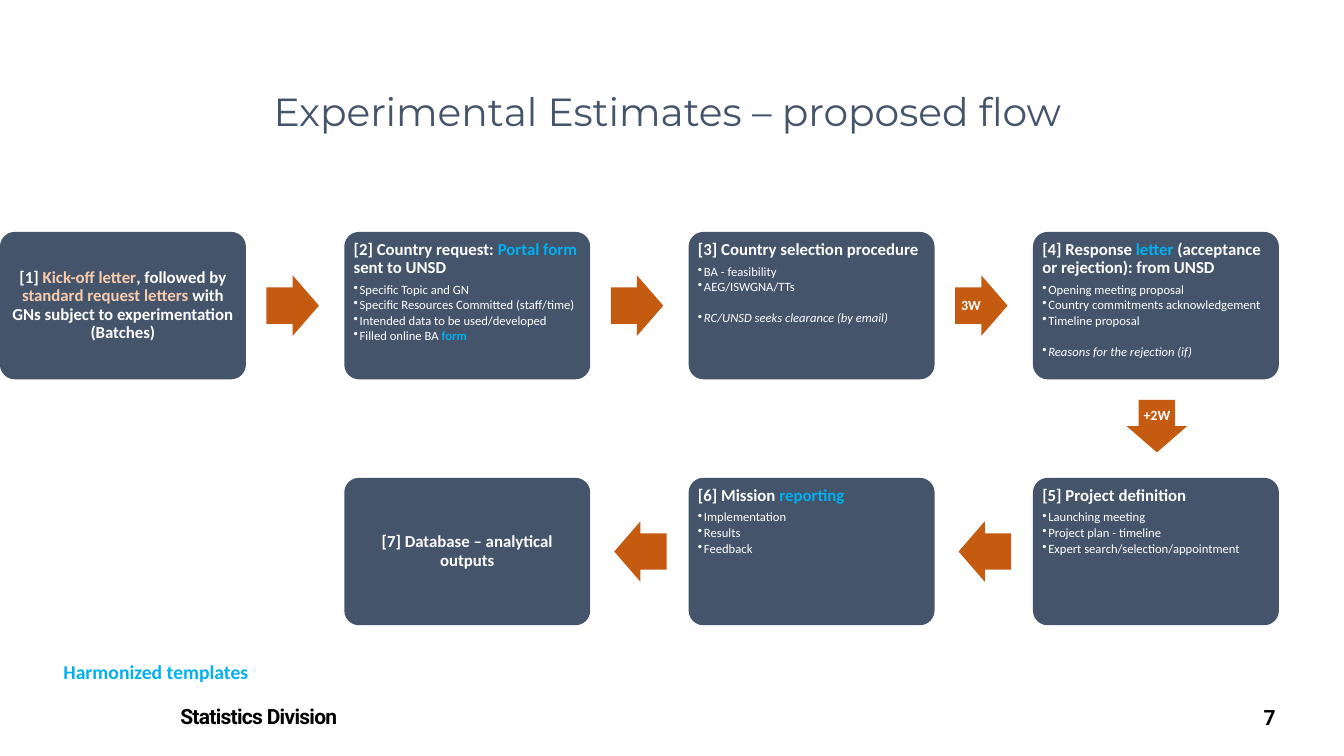
from dataclasses import dataclass
from typing import NamedTuple

from lxml.etree import SubElement
from pptx import Presentation
from pptx.dml.color import RGBColor as Rgb
from pptx.enum.shapes import MSO_SHAPE as Kind
from pptx.enum.text import MSO_ANCHOR as Anchor, PP_ALIGN as Align
from pptx.oxml.ns import qn
from pptx.util import Inches, Pt

WIDE, HIGH = Inches(13.33), Inches(7.5)


@dataclass(frozen=True)
class Theme:
    slate: str = "44546A"
    rust: str = "C55A11"
    white: str = "FFFFFF"
    black: str = "000000"
    peach: str = "F8CBAD"
    cyan: str = "00B0F0"
    body: str = "Calibri"
    title: str = "Montserrat"
    foot: str = "Roboto"
    huge: float = 28
    large: float = 15
    note: float = 14
    head: float = 12
    mark: float = 10
    item: float = 9


@dataclass(frozen=True)
class Grid:
    """Flow grid, in percent of the slide; arrow sizes in inches."""
    top: float = 30.67
    col: float = 25.62
    row: float = 32.53
    card_w: float = 18.3
    card_h: float = 19.5
    arrow_l: float = 0.52
    arrow_w: float = 0.6


class Bit(NamedTuple):
    text: str
    hue: str = Theme.white
    bold: bool = True


class Item(NamedTuple):
    bits: list[Bit]
    italic: bool = False
    apart: bool = False


class Card(NamedTuple):
    col: int
    row: int
    head: list[Bit]
    items: list[Item] = []


class Arrow(NamedTuple):
    col: float
    row: float
    kind: Kind
    label: str = ""


class Label(NamedTuple):
    """Free text; left, top, width and height in percent of the slide."""
    text: str
    box: tuple[float, float, float, float]
    font: dict
    hue: str
    align: Align = Align.LEFT
    anchor: Anchor = Anchor.TOP
    track: int = 0


THEME, GRID = Theme(), Grid()
HEAD = {"name": THEME.body, "size": Pt(THEME.head)}
ITEM = {"name": THEME.body, "size": Pt(THEME.item)}
MARK = {"name": THEME.body, "size": Pt(THEME.mark)}
FOOT = {"name": THEME.foot, "size": Pt(THEME.large), "bold": True}
NOTE = {"name": THEME.body, "size": Pt(THEME.note), "bold": True}
TITLE = {"name": THEME.title, "size": Pt(THEME.huge), "bold": False}


def plain(*texts: str) -> list[Item]:
    return [Item([Bit(text, bold=False)]) for text in texts]


def last(text: str) -> Item:
    return Item([Bit(text, bold=False)], italic=True, apart=True)


CARDS = [
    Card(0, 0, [Bit("[1] "), Bit("Kick-off letter", THEME.peach),
                Bit(", followed by "),
                Bit("standard request letters", THEME.peach),
                Bit(" with GNs subject to experimentation (Batches)")]),
    Card(1, 0, [Bit("[2] Country request: "), Bit("Portal form", THEME.cyan),
                Bit(" sent to UNSD")],
         plain("Specific Topic and GN",
               "Specific Resources Committed (staff/time)",
               "Intended data to be used/developed")
         + [Item([Bit("Filled online BA ", bold=False),
                  Bit("form", THEME.cyan)])]),
    Card(2, 0, [Bit("[3] Country selection procedure")],
         plain("BA - feasibility", "AEG/ISWGNA/TTs")
         + [last("RC/UNSD seeks clearance (by email)")]),
    Card(3, 0, [Bit("[4] Response "), Bit("letter", THEME.cyan),
                Bit(" (acceptance or rejection): from UNSD")],
         plain("Opening meeting proposal",
               "Country commitments acknowledgement", "Timeline proposal")
         + [last("Reasons for the rejection (if)")]),
    Card(3, 1, [Bit("[5] Project definition")],
         plain("Launching meeting", "Project plan - timeline",
               "Expert search/selection/appointment")),
    Card(2, 1, [Bit("[6] Mission "), Bit("reporting", THEME.cyan)],
         plain("Implementation", "Results", "Feedback")),
    Card(1, 1, [Bit("[7] Database – analytical outputs")]),
]
ARROWS = [
    Arrow(0.85, 0.3, Kind.RIGHT_ARROW),
    Arrow(1.85, 0.3, Kind.RIGHT_ARROW),
    Arrow(2.85, 0.3, Kind.RIGHT_ARROW, "3W"),
    Arrow(3.36, 0.79, Kind.DOWN_ARROW, "+2W"),
    Arrow(2.86, 1.3, Kind.LEFT_ARROW),
    Arrow(1.86, 1.3, Kind.LEFT_ARROW),
]
LABELS = [
    Label("Statistics Division", (12.68, 92.4, 43.8, 4.67), FOOT,
          THEME.black, track=-50),
    Label("7", (81.4, 92.53, 14.25, 4.67), FOOT, THEME.black,
          Align.RIGHT, track=-50),
    Label("Harmonized templates", (3.98, 86.67, 16.5, 4.53), NOTE, THEME.cyan),
    Label("Experimental Estimates – proposed flow", (9.83, 7.47, 79.65, 14.27),
          TITLE, THEME.slate, Align.CENTER, Anchor.MIDDLE),
]


def across(share: float) -> int:
    return round(WIDE * share / 100)


def down(share: float) -> int:
    return round(HIGH * share / 100)


def apply(target, form: dict) -> None:
    for name, value in form.items():
        setattr(target, name, value)


def write(para, bits: list[Bit], font: dict, italic: bool = False) -> None:
    for bit in bits:
        run = para.add_run()
        run.text = bit.text
        apply(run.font, {"bold": bit.bold, "italic": italic, **font})
        run.font.color.rgb = Rgb.from_string(bit.hue)


def dot(para) -> None:
    """Give the paragraph a hanging bullet."""
    props = para._p.get_or_add_pPr()
    props.set("marL", str(Inches(0.06)))
    props.set("indent", str(-Inches(0.06)))
    SubElement(props, qn("a:buChar")).set("char", "•")


def solid(slide, kind: Kind, box: tuple, hue: str, adjust: list[float]):
    shape = slide.shapes.add_shape(kind, *box)
    shape.shadow.inherit = False
    shape.fill.solid()
    shape.fill.fore_color.rgb = Rgb.from_string(hue)
    shape.line.fill.background()
    for i, value in enumerate(adjust):
        shape.adjustments[i] = value
    return shape


def pad(frame, left: float, top: float, right: float, base: float) -> None:
    apply(frame, {"word_wrap": True, "margin_left": Inches(left),
                  "margin_top": Inches(top), "margin_right": Inches(right),
                  "margin_bottom": Inches(base)})


def draw_card(slide, card: Card) -> None:
    box = (across(card.col * GRID.col), down(GRID.top + card.row * GRID.row),
           across(GRID.card_w), down(GRID.card_h))
    frame = solid(slide, Kind.ROUNDED_RECTANGLE, box, THEME.slate,
                  [0.1]).text_frame
    pad(frame, 0.05, 0.05, 0.05, 0.05)
    frame.vertical_anchor = Anchor.TOP if card.items else Anchor.MIDDLE
    head = frame.paragraphs[0]
    apply(head, {"alignment": Align.LEFT if card.items else Align.CENTER,
                 "line_spacing": 0.9, "space_after": Pt(4.2)})
    write(head, card.head, HEAD)
    for item in card.items:
        para = frame.add_paragraph()
        apply(para, {"level": 1, "alignment": Align.LEFT, "line_spacing": 0.9,
                     "space_before": Pt(11.25 if item.apart else 0),
                     "space_after": Pt(1.35)})
        dot(para)
        write(para, item.bits, ITEM, item.italic)


def draw_arrow(slide, arrow: Arrow) -> None:
    drop = arrow.kind == Kind.DOWN_ARROW
    wide, high = Inches(GRID.arrow_l), Inches(GRID.arrow_w)
    if drop:
        wide, high = high, wide
    box = (across(arrow.col * GRID.col) - wide // 2,
           down(GRID.top + arrow.row * GRID.row) - high // 2, wide, high)
    frame = solid(slide, arrow.kind, box, THEME.rust, [0.6, 0.5]).text_frame
    if arrow.label:
        pad(frame, 0, 0, 0 if drop else 0.05, 0.05 if drop else 0)
        frame.vertical_anchor = Anchor.MIDDLE
        para = frame.paragraphs[0]
        apply(para, {"alignment": Align.CENTER, "line_spacing": 0.9})
        write(para, [Bit(arrow.label)], MARK)


def draw_label(slide, label: Label) -> None:
    left, top, wide, high = label.box
    frame = slide.shapes.add_textbox(across(left), down(top), across(wide),
                                     down(high)).text_frame
    apply(frame, {"word_wrap": True, "vertical_anchor": label.anchor})
    para = frame.paragraphs[0]
    para.alignment = label.align
    write(para, [Bit(label.text, label.hue)], label.font)
    if label.track:
        para.runs[0]._r.get_or_add_rPr().set("spc", str(label.track))


def main() -> None:
    deck = Presentation()
    apply(deck, {"slide_width": WIDE, "slide_height": HIGH})
    slide = deck.slides.add_slide(deck.slide_layouts[6])
    for draw, things in ((draw_card, CARDS), (draw_arrow, ARROWS),
                         (draw_label, LABELS)):
        for thing in things:
            draw(slide, thing)
    deck.save("out.pptx")


if __name__ == "__main__":
    main()
